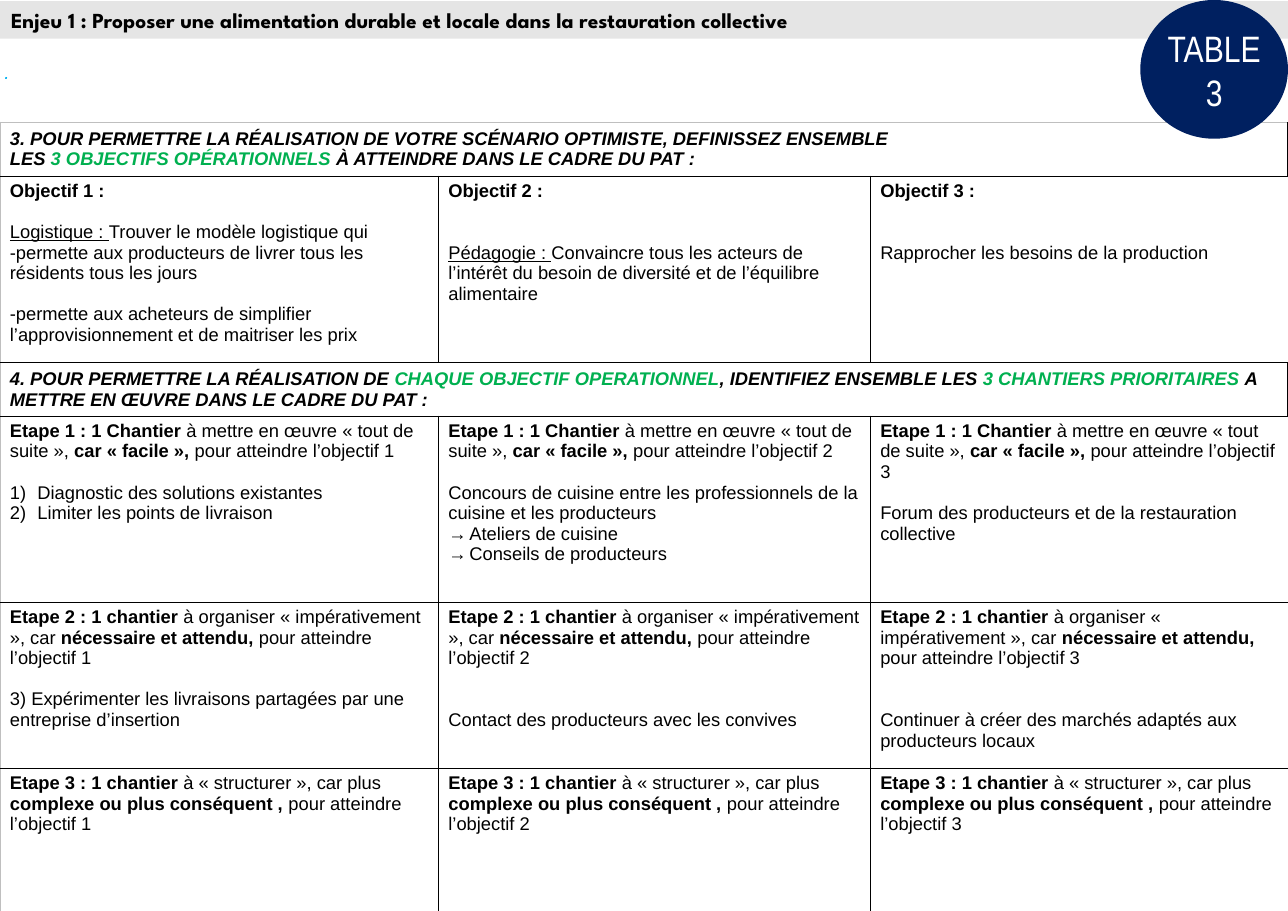
from lxml import etree
from pptx import Presentation, util as u
from pptx.dml.color import RGBColor
from pptx.enum import shapes, text
from pptx.oxml import ns

# Palette and fonts
BLACK = RGBColor(0x00, 0x00, 0x00)
WHITE = RGBColor(0xFF, 0xFF, 0xFF)
GREEN = RGBColor(0x00, 0xB0, 0x50)
BLUE = RGBColor(0x00, 0xB0, 0xF0)
NAVY = RGBColor(0x00, 0x20, 0x60)
BAR_GREY = RGBColor(0xE5, 0xE5, 0xE5)
EDGE_GREY = RGBColor(0xBF, 0xBF, 0xBF)
BODY_FONT = "Arial"

# Grid, in inches
WIDTH, HEIGHT = 11.69, 8.27
COLUMNS = (3.98, 3.92, 3.79)
ROWS = (0.49, 1.69, 0.49, 1.69, 1.51, 1.48)
TABLE_TOP = 1.11
LINE = 13.5  # one empty line of table text, in points

# A paragraph is (empty lines before, bullet, spans); a span is (text, style),
# where the style letters are b bold, i italic, u underlined, g green.
QUESTION_3 = [
    (0, None, [("3. POUR PERMETTRE LA RÉALISATION DE VOTRE SCÉNARIO OPTIMISTE, "
                "DEFINISSEZ ENSEMBLE", "bi")]),
    (0, None, [("LES ", "bi"), ("3 OBJECTIFS OPÉRATIONNELS ", "big"),
               ("À ATTEINDRE DANS LE CADRE DU PAT :", "bi")]),
]
QUESTION_4 = [
    (0, None, [("4. POUR PERMETTRE LA RÉALISATION DE ", "bi"),
               ("CHAQUE OBJECTIF OPERATIONNEL", "big"),
               (", IDENTIFIEZ ENSEMBLE LES ", "bi"),
               ("3 CHANTIERS PRIORITAIRES ", "big"),
               ("A METTRE EN ŒUVRE DANS LE CADRE DU PAT :", "bi")]),
]
OBJECTIVES = [
    [(1, None, [("Logistique : ", "u"), ("Trouver le modèle logistique qui", "")]),
     (0, None, [("-permette aux producteurs de livrer tous les résidents tous les jours", "")]),
     (1, None, [("-permette aux acheteurs de simplifier l’approvisionnement "
                 "et de maitriser les prix", "")])],
    [(2, None, [("Pédagogie : ", "u"),
                ("Convaincre tous les acteurs de l’intérêt du besoin de diversité "
                 "et de l’équilibre alimentaire", "")])],
    [(2, None, [("Rapprocher les besoins de la production", "")])],
]
STEP_HEADS = [
    [("Etape 1 : 1 Chantier ", "b"), ("à mettre en œuvre « tout de suite »,", ""),
     (" car « facile », ", "b")],
    [("Etape 2 : 1 chantier ", "b"), ("à organiser « impérativement », car ", ""),
     ("nécessaire et attendu, ", "b")],
    [("Etape 3 : 1 chantier ", "b"), ("à « structurer », car plus ", ""),
     ("complexe ou plus conséquent , ", "b")],
]
STEP_ANSWERS = [
    [[(1, "1)", [("Diagnostic des solutions existantes", "")]),
      (0, "1)", [("Limiter les points de livraison", "")])],
     [(1, None, [("Concours de cuisine entre les professionnels de la cuisine "
                  "et les producteurs", "")]),
      (0, "→", [("Ateliers de cuisine", "")]),
      (0, "→", [("Conseils de producteurs", "")])],
     [(1, None, [("Forum des producteurs et de la restauration collective", "")])]],
    [[(1, None, [("3) Expérimenter les livraisons partagées par une entreprise "
                  "d’insertion", "")])],
     [(2, None, [("Contact des producteurs avec les convives", "")])],
     [(2, None, [("Continuer à créer des marchés adaptés aux producteurs locaux", "")])]],
    [[], [], []],
]


def add_span(para, words, size, font=BODY_FONT, color=BLACK, style=""):
    span = para.add_run()
    span.text = words
    span.font.name, span.font.size = font, u.Pt(size)
    span.font.bold, span.font.italic = "b" in style, "i" in style
    span.font.underline = "u" in style
    span.font.color.rgb = GREEN if "g" in style else color


def set_bullet(para, bullet):
    indent = u.Inches(0.19 if bullet == "→" else 0.25)
    props = para._p.get_or_add_pPr()
    props.set("marL", str(indent))
    props.set("indent", str(-indent))
    etree.SubElement(props, ns.qn("a:buFont"), typeface=BODY_FONT)
    if bullet == "→":
        etree.SubElement(props, ns.qn("a:buChar"), char=bullet)
    else:
        etree.SubElement(props, ns.qn("a:buAutoNum"), type="arabicParenR")


def set_borders(cell, row, column):
    outer = {"L": column == 0, "R": column == len(COLUMNS) - 1, "T": row == 0, "B": False}
    props = cell._tc.get_or_add_tcPr()
    for side, is_outer in outer.items():
        width = u.Pt(0.5 if is_outer else 1)
        line = etree.SubElement(props, ns.qn("a:ln" + side), w=str(width))
        fill = etree.SubElement(line, ns.qn("a:solidFill"))
        etree.SubElement(fill, ns.qn("a:srgbClr"), val=str(EDGE_GREY if is_outer else BLACK))


def fill_cell(cell, paragraphs, anchor=text.MSO_ANCHOR.TOP):
    cell.vertical_anchor = anchor
    for index, (gap, bullet, spans) in enumerate(paragraphs):
        para = cell.text_frame.paragraphs[0] if index == 0 else cell.text_frame.add_paragraph()
        if bullet:
            set_bullet(para, bullet)
        if gap:
            para.space_before = u.Pt(gap * LINE)
        for words, style in spans:
            add_span(para, words, 12, style=style)


def format_box(box, fill, anchor, inset):
    box.fill.solid()
    box.fill.fore_color.rgb = fill
    box.line.fill.background()
    frame = box.text_frame
    frame.word_wrap, frame.auto_size = True, text.MSO_AUTO_SIZE.NONE
    frame.vertical_anchor = anchor
    frame.margin_left = frame.margin_right = u.Inches(inset)
    frame.margin_top = frame.margin_bottom = u.Inches(0.04)
    return frame.paragraphs[0]


def place(box, left, top, width, height):
    box.left, box.top = u.Inches(left), u.Inches(top)
    box.width, box.height = u.Inches(width), u.Inches(height)


def add_box(page, kind, area, fill, anchor):
    box = page.shapes.add_shape(kind, *(u.Inches(length) for length in area))
    box.shadow.inherit = False
    return box, format_box(box, fill, anchor, 0.04)


def add_header(page):
    strip, para = add_box(page, shapes.MSO_SHAPE.RECTANGLE, (0, 0.09, WIDTH, 0.71),
                          WHITE, text.MSO_ANCHOR.BOTTOM)
    para.alignment = text.PP_ALIGN.LEFT
    add_span(para, ".", 12.3, color=BLUE, style="i")

    title = page.shapes.title
    place(title, 0, 0.01, WIDTH, 0.34)
    para = format_box(title, BAR_GREY, text.MSO_ANCHOR.MIDDLE, 0.1)
    para.alignment = text.PP_ALIGN.LEFT
    add_span(para, "Enjeu 1 : Proposer une alimentation durable et locale dans la "
             "restauration collective", 14, font="League Spartan", style="b")
    strip.element.addnext(title.element)


def add_worksheet(page):
    table = page.shapes.add_table(len(ROWS), len(COLUMNS), 0, u.Inches(TABLE_TOP),
                                  u.Inches(WIDTH), u.Inches(sum(ROWS))).table
    table.first_row = table.horz_banding = False
    for column, width in zip(table.columns, COLUMNS):
        column.width = u.Inches(width)
    for row, height in zip(table.rows, ROWS):
        row.height = u.Inches(height)
    for row in range(len(ROWS)):
        for column in range(len(COLUMNS)):
            cell = table.cell(row, column)
            set_borders(cell, row, column)
            cell.fill.solid()
            cell.fill.fore_color.rgb = WHITE
            cell.margin_left = cell.margin_right = u.Inches(0.09)
            cell.margin_top = cell.margin_bottom = u.Inches(0.04)

    # Question rows span the table
    for row, question in ((0, QUESTION_3), (2, QUESTION_4)):
        table.cell(row, 0).merge(table.cell(row, len(COLUMNS) - 1))
        fill_cell(table.cell(row, 0), question, text.MSO_ANCHOR.MIDDLE)

    # One column per objective, with its three steps
    for column, objective in enumerate(OBJECTIVES):
        number = column + 1
        head = (0, None, [(f"Objectif {number} :", "b")])
        fill_cell(table.cell(1, column), [head] + objective)
        for step, (spans, answers) in enumerate(zip(STEP_HEADS, STEP_ANSWERS)):
            head = (0, None, spans + [(f"pour atteindre l’objectif {number}", "")])
            fill_cell(table.cell(3 + step, column), [head] + answers[column])


def add_badge(page):
    width = 1.34
    _, para = add_box(page, shapes.MSO_SHAPE.OVAL, (WIDTH - width, 0, width, 1.26),
                      NAVY, text.MSO_ANCHOR.MIDDLE)
    para.alignment = text.PP_ALIGN.CENTER
    add_span(para, "TABLE 3", 24, font="Arial Narrow", color=WHITE)


def main():
    deck = Presentation()
    deck.slide_width, deck.slide_height = u.Inches(WIDTH), u.Inches(HEIGHT)
    page = deck.slides.add_slide(deck.slide_layouts[5])
    add_header(page)
    add_worksheet(page)
    add_badge(page)
    deck.save("out.pptx")


if __name__ == "__main__":
    main()
